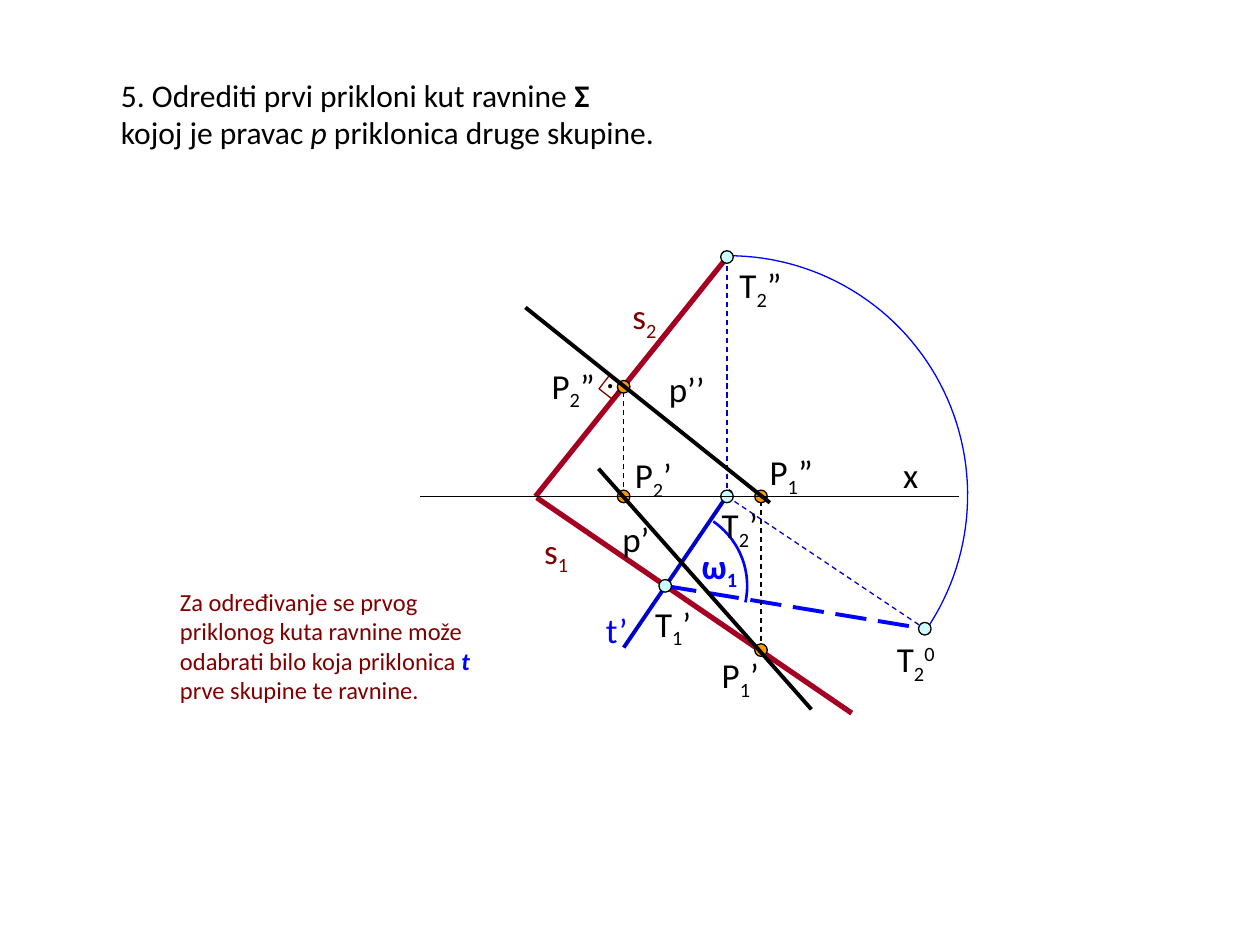
from math import cos, radians, sin

from lxml.etree import SubElement
from pptx import Presentation
from pptx.dml.color import RGBColor
from pptx.enum.dml import MSO_LINE
from pptx.enum.shapes import MSO_CONNECTOR, MSO_SHAPE
from pptx.enum.text import MSO_ANCHOR, MSO_AUTO_SIZE, PP_ALIGN
from pptx.oxml.ns import qn
from pptx.util import Inches, Pt

COLORS = {
    "black": "000000", "maroon": "800000", "crimson": "A50021",
    "blue": "0000FF", "navy": "0000CC", "orange": "FF9900", "ice": "CCFFFF",
}
FONT = "Calibri"
DOT = 0.1
SUB, SUPER = -25000, 30000

# Projected points, relative to the diagram box
POINTS = {
    "P1'": (2.71, 3.17), "P1''": (2.71, 1.95),
    "P2'": (1.62, 1.95), "P2''": (1.62, 1.08),
    "T1'": (1.95, 2.66), "T2'": (2.44, 1.95),
    "T2''": (2.44, 0.05), "T2_0": (4.01, 3.0),
}

# Lines under the points: start, end, colour, width, dash
CONSTRUCTION = [
    ((0.93, 1.96), (3.43, 3.67), "crimson", 3, None),     # s1
    ((0.92, 1.95), (2.45, 0.04), "crimson", 3, None),     # s2
    ((1.62, 3.15), (2.47, 1.9), "navy", 2.25, None),      # t'
    (POINTS["T2'"], POINTS["T2_0"], "navy", 0.75, MSO_LINE.DASH),
    (POINTS["T1'"], POINTS["T2_0"], "blue", 2.25, MSO_LINE.LONG_DASH),
    (POINTS["P2'"], POINTS["P2''"], "black", 0.75, MSO_LINE.DASH),
    (POINTS["P1'"], POINTS["P1''"], "black", 0.75, MSO_LINE.DASH),
    (POINTS["T2''"], POINTS["T2'"], "navy", 0.75, MSO_LINE.DASH),
]
# Lines over the points
AXIS_AND_P = [
    ((0, 1.95), (4.28, 1.95), "black", 0.75, None),       # x
    ((0.84, 0.45), (2.78, 2.0), "black", 2.25, None),     # p''
    ((1.42, 1.73), (3.11, 3.64), "black", 2.25, None),    # p'
]
# Centre, radius, start and end angle, width
ARCS = [
    ((2.45, 1.94), 1.9, -90, 34.3, 0.75),
    ((1.98, 2.66), 0.62, -55.5, 12.2, 1.5),
]
# Letter, subscript, mark, colour, left, top, width
LABELS = [
    ("s", "1", "", "maroon", 0.89, 2.16, 0.59),
    ("s", "2", "", "maroon", 1.59, 0.3, 0.5),
    (".", "", "", "black", 1.38, 0.77, 0.29),
    ("t’", "", "", "blue", 1.38, 2.79, 0.51),
    ("ω", "1", "", "blue", 2.14, 2.28, 0.51),
    ("P", "1", "’", "black", 2.3, 3.15, 0.53),
    ("P", "1", "”", "black", 2.68, 1.54, 0.58),
    ("P", "2", "’", "black", 1.61, 1.56, 0.53),
    ("P", "2", "”", "black", 0.95, 0.85, 0.56),
    ("T", "1", "’", "black", 1.77, 2.74, 0.59),
    ("T", "2", "’", "black", 2.3, 1.96, 0.64),
    ("T", "2", "0", "black", 3.69, 3.02, 0.54),
    ("T", "2", "”", "black", 2.44, 0.05, 0.62),
    ("p’’", "", "", "black", 1.88, 0.88, 0.58),
    ("p’", "", "", "black", 1.51, 2.07, 0.85),
    ("x", "", "", "black", 3.74, 1.56, 0.38),
]


def rgb(name):
    return RGBColor.from_string(COLORS[name])


def place(shape, left, top, width, height):
    shape.left, shape.top = Inches(left), Inches(top)
    shape.width, shape.height = Inches(width), Inches(height)


def style_paragraph(paragraph, size, color):
    paragraph.alignment = PP_ALIGN.LEFT
    paragraph.font.name = FONT
    paragraph.font.size = Pt(size)
    paragraph.font.color.rgb = rgb(color)


def add_run(paragraph, text, baseline=0):
    run = paragraph.add_run()
    run.text = text
    if baseline:
        run._r.get_or_add_rPr().set("baseline", str(baseline))
    return run


def add_textbox(slide, left, top, width, height):
    frame = slide.shapes.add_textbox(
        Inches(left), Inches(top), Inches(width), Inches(height)).text_frame
    frame.word_wrap = True
    return frame.paragraphs[0]


def add_task(slide, left, top, width, height):
    title = slide.shapes.title
    place(title, left, top, width, height)
    frame = title.text_frame
    frame.vertical_anchor = MSO_ANCHOR.TOP
    frame.auto_size = MSO_AUTO_SIZE.NONE
    task = frame.paragraphs[0]
    style_paragraph(task, 18, "black")
    add_run(task, "5. Odrediti prvi prikloni kut ravnine ")
    add_run(task, "Σ").font.bold = True
    add_run(task, " kojoj je pravac ")
    add_run(task, "p ").font.italic = True
    add_run(task, "priklonica druge skupine.")


def add_remark(slide, left, top, width, height):
    remark = add_textbox(slide, left, top, width, height)
    style_paragraph(remark, 14, "maroon")
    add_run(remark, "Za određivanje se prvog priklonog kuta ravnine može "
                    "odabrati bilo koja priklonica ")
    line_name = add_run(remark, "t").font
    line_name.bold = line_name.italic = True
    line_name.color.rgb = rgb("blue")
    add_run(remark, " prve skupine te ravnine.")


def add_diagram(slide, left, top):
    shapes = slide.shapes

    def at(x, y):
        return Inches(left + x), Inches(top + y)

    def add_lines(lines):
        for start, end, color, width, dash in lines:
            line = shapes.add_connector(MSO_CONNECTOR.STRAIGHT, *at(*start), *at(*end))
            line.line.color.rgb = rgb(color)
            line.line.width = Pt(width)
            if dash:
                line.line.dash_style = dash
            SubElement(line._element.spPr, qn("a:effectLst"))

    def outline(shape, color, width=0.75):
        shape.shadow.inherit = False
        shape.line.color.rgb = rgb(color)
        shape.line.width = Pt(width)

    # Rotation arc and angle arc
    for (cx, cy), radius, first, last, width in ARCS:
        steps = 60
        angles = [radians(first + (last - first) * i / steps) for i in range(steps + 1)]
        curve = [at(cx + radius * cos(a), cy + radius * sin(a)) for a in angles]
        builder = shapes.build_freeform(*curve[0])
        builder.add_line_segments(curve[1:], close=False)
        arc = builder.convert_to_shape()
        arc.fill.background()
        outline(arc, "blue", width)

    add_lines(CONSTRUCTION)

    # Right-angle mark
    corner = shapes.add_shape(
        MSO_SHAPE.RECTANGLE, *at(1.45, 1.02), Inches(0.13), Inches(0.13))
    corner.rotation = 37.9
    corner.fill.background()
    outline(corner, "maroon")

    # Points
    for name, (x, y) in POINTS.items():
        point = shapes.add_shape(
            MSO_SHAPE.OVAL, *at(x - DOT / 2, y - DOT / 2), Inches(DOT), Inches(DOT))
        point.fill.solid()
        point.fill.fore_color.rgb = rgb("orange" if name[0] == "P" else "ice")
        outline(point, "black")

    add_lines(AXIS_AND_P)

    # Labels
    for letter, index, mark, color, x, y, width in LABELS:
        label = add_textbox(slide, left + x, top + y, width, 0.44)
        style_paragraph(label, 20, color)
        label.font.bold = letter == "ω"
        add_run(label, letter)
        if index:
            add_run(label, index, SUB)
        if mark:
            add_run(label, mark, SUPER if mark == "0" else 0)


def main():
    prs = Presentation()
    prs.slide_width, prs.slide_height = Inches(10), Inches(7.5)
    slide = prs.slides.add_slide(prs.slide_layouts[5])
    add_task(slide, 0.86, 0.55, 4.44, 0.71)
    add_remark(slide, 1.33, 4.61, 2.51, 1.04)
    add_diagram(slide, 3.33, 1.99)
    prs.save("out.pptx")


if __name__ == "__main__":
    main()
